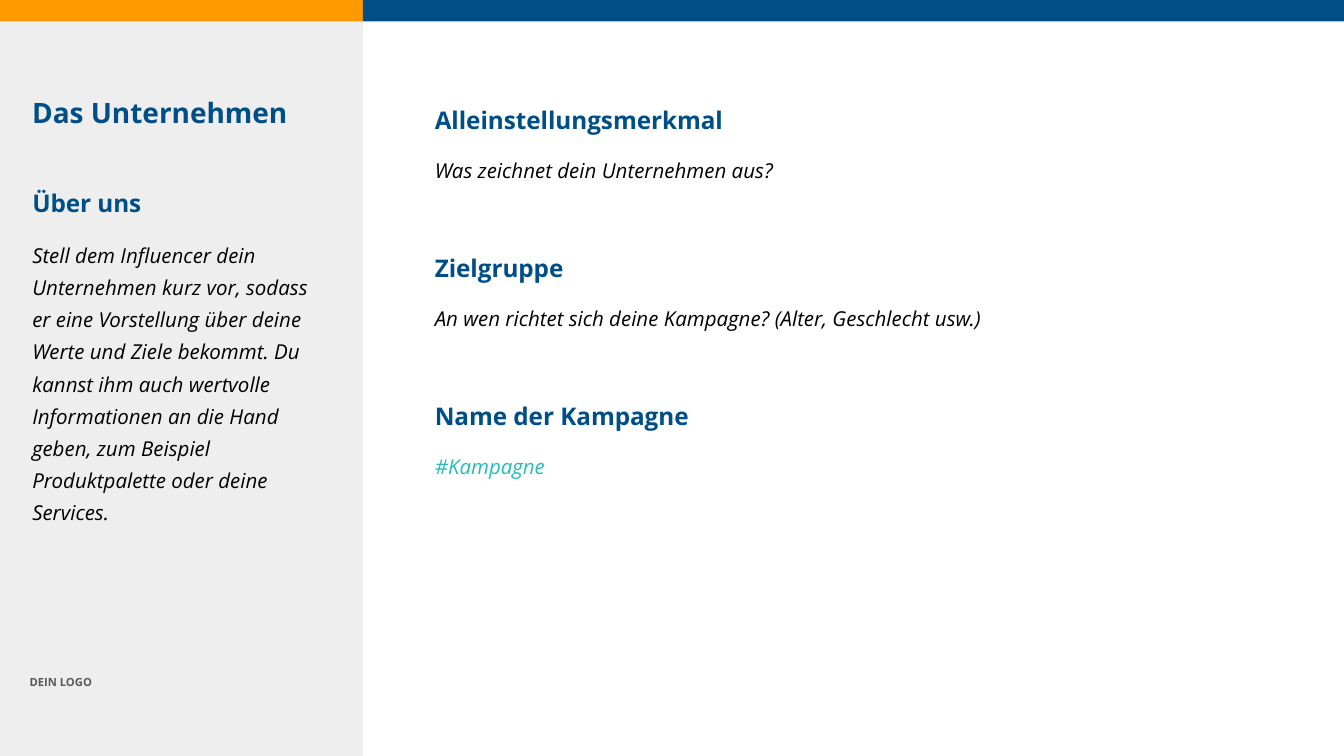
from pptx import Presentation
from pptx import util as u
from pptx.dml.color import RGBColor
from pptx.enum import shapes, text

BLUE = RGBColor(0x00, 0x4E, 0x87)
GOLD = RGBColor(0xFF, 0x99, 0x00)
PALE = RGBColor(0xEE, 0xEE, 0xEE)
TEAL = RGBColor(0x28, 0xBB, 0xBB)
GREY = RGBColor(0x59, 0x59, 0x59)
BLACK = RGBColor(0, 0, 0)
WHITE = RGBColor(255, 255, 255)
FONT = "Open Sans"
PLAIN = "{2D5ABB26-0587-4C30-8999-92F81FD0307C}"  # table style without grid

# Grid of square units: 100 columns by 56.25 rows (16:9)
COLS, ROWS = 100, 56.25
UNIT = u.Inches(10) / COLS
SIDE, BAR = 27, 1.6  # sidebar width, top bar height
HOLD = 32.8  # side of the square frame that holds a table

TOPICS = [
    ("Alleinstellungsmerkmal", "Was zeichnet dein Unternehmen aus?", BLACK),
    ("Zielgruppe",
     "An wen richtet sich deine Kampagne? (Alter, Geschlecht usw.)", BLACK),
    ("Name der Kampagne", "#Kampagne", TEAL),
]
ABOUT = ("Stell dem Influencer dein Unternehmen kurz vor, sodass er eine "
         "Vorstellung über deine Werte und Ziele bekommt. Du kannst ihm auch "
         "wertvolle Informationen an die Hand geben, zum Beispiel "
         "Produktpalette oder deine Services.")


def grid(*vals):
    return [u.Emu(round(v * UNIT)) for v in vals]


def write(frame, words, size=11, color=BLACK, bold=False, italic=False,
          space=None, after=None):
    frame.word_wrap = True
    para = frame.paragraphs[0]
    para.line_spacing = space
    para.space_after = after
    run = para.add_run()
    run.text = words
    font = run.font
    font.name, font.size = FONT, u.Pt(size)
    font.bold, font.italic = bold, italic
    font.color.rgb = color


def block(slide, box, color):
    rect = slide.shapes.add_shape(shapes.MSO_SHAPE.RECTANGLE, *grid(*box))
    rect.shadow.inherit = False
    rect.fill.solid()
    rect.fill.fore_color.rgb = color
    rect.line.fill.background()


def label(slide, box, words, inset, **style):
    frame = slide.shapes.add_textbox(*grid(*box)).text_frame
    frame.margin_left, frame.margin_top, frame.margin_right, \
        frame.margin_bottom = grid(*[inset] * 4)
    write(frame, words, **style)


def entry(slide, box, cols, rows, head, body, color=BLACK, fill=None):
    """Two-row table: a heading above its description."""
    left, top = box
    holder = slide.shapes.add_table(2, 2, *grid(left, top, HOLD, HOLD))
    table = holder.table
    table.first_row = table.horz_banding = False
    table._tbl.tblPr[0].text = PLAIN
    for col, wide in zip(table.columns, grid(*cols)):
        col.width = wide
    for row, high in zip(table.rows, grid(*rows)):
        row.height = high
    holder.width, holder.height = grid(HOLD, HOLD)
    for row, pad in enumerate((1, 0)):
        cell = table.cell(row, 0)
        cell.merge(table.cell(row, 1))
        cell.margin_left, cell.margin_right = grid(1, 1)
        cell.margin_top, cell.margin_bottom = grid(pad, pad)
        for part in (cell, table.cell(row, 1)):
            if fill is None:
                part.fill.background()
            else:
                part.fill.solid()
                part.fill.fore_color.rgb = fill
    table.cell(0, 0).vertical_anchor = text.MSO_ANCHOR.MIDDLE
    write(table.cell(0, 0).text_frame, head, size=13, color=BLUE, bold=True)
    write(table.cell(1, 0).text_frame, body, color=color, italic=True,
          space=1.15)


def frame(slide, box):
    """Sidebar panel and the two-colour top bar."""
    left, top, wide, high = box
    block(slide, (left, top + 1, SIDE, high - 1), PALE)
    block(slide, (left, top, SIDE, BAR), GOLD)
    block(slide, (left + SIDE, top, wide - SIDE, BAR), BLUE)


def about(slide, box):
    """Title, company text and logo caption."""
    left, top, wide, high = box
    label(slide, (left + 1.4, top + 6.1, wide - 2.5, 5.5), "Das Unternehmen",
          1, size=15, color=BLUE, bold=True)
    entry(slide, (left + 1.4, top + 12.65), (6.3, 16.7), (5, 22.5),
          "Über uns", ABOUT)
    label(slide, (left + 1.8, top + high - 6.55, 5.9, 1.6), "DEIN LOGO", 0.4,
          size=6, color=GREY, bold=True, space=1.15, after=u.Pt(16))


def topics(slide, box):
    """Evenly stacked topics."""
    left, top, wide, step = box
    for i, (head, body, color) in enumerate(TOPICS):
        entry(slide, (left, top + i * step), (17.7, wide - 17.7), (4.75, 2.3),
              head, body, color, WHITE)


def main():
    deck = Presentation()
    deck.slide_width, deck.slide_height = grid(COLS, ROWS)
    slide = deck.slides.add_slide(deck.slide_layouts[6])
    frame(slide, (0, 0, COLS, ROWS))
    about(slide, (0, 0, SIDE, ROWS))
    topics(slide, (31.35, 6.6, 64.6, 11))
    deck.save("out.pptx")


if __name__ == "__main__":
    main()
